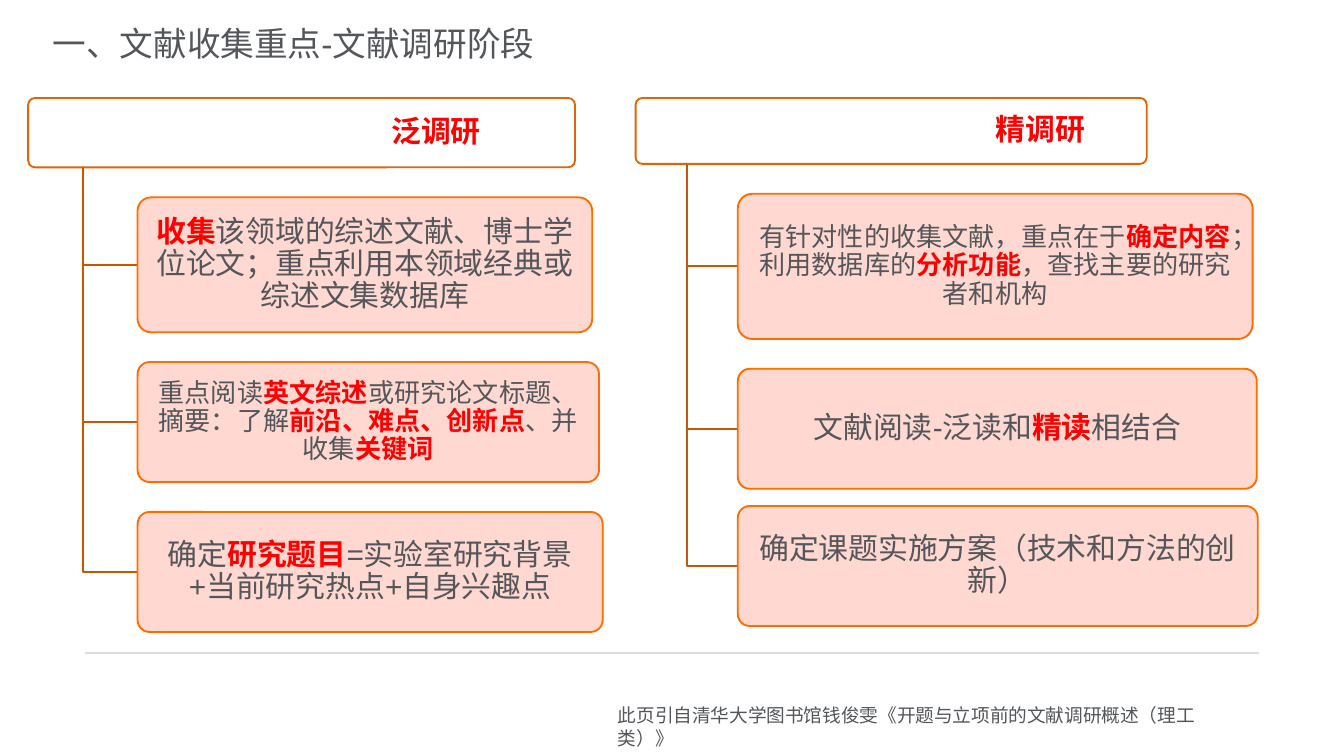
from lxml import etree
from pptx import Presentation
from pptx import util as u
from pptx.dml.color import RGBColor
from pptx.enum import shapes, text
from pptx.oxml import ns

Pt = u.Pt
FONT = "Arial"
COLORS = {
    "text": "53565A",
    "accent": "FF0000",
    "white": "FFFFFF",
    "header_line": "E76200",
    "card": "FFD4CC",
    "card_line": "FF6C00",
    "branch": "CC5600",
    "rule": "DCDCDC",
}
HEADER_TOP = 52.5

COLUMNS = [
    {
        "header": "泛调研", "left": 15.1, "width": 293, "height": 37.2, "indent": 144,
        "cards": [
            (16, 243.6, 72.3, 16, [("收集", True), ("该领域的综述文献、博士学位论文；重点利用本领域经典或综述文集数据库", False)]),
            (16, 247.2, 64.3, 14, [("重点阅读", False), ("英文综述", True), ("或研究论文标题、摘要：了解", False),
                                   ("前沿、难点、创新点", True), ("、并收集", False), ("关键词", True)]),
            (16, 249.2, 64.3, 16, [("确定", False), ("研究题目", True), ("=实验室研究背景+当前研究热点+自身兴趣点", False)]),
        ],
    },
    {
        "header": "精调研", "left": 340.5, "width": 273.8, "height": 35.3, "indent": 160,
        "cards": [
            (16, 275.8, 77.8, 14, [("有针对性的收集文献，重点在于", False), ("确定内容", True), ("；利用数据库的", False),
                                   ("分析功能", True), ("，查找主要的研究者和机构", False)]),
            (16, 278, 64.3, 16, [("文献阅读-泛读和", False), ("精读", True), ("相结合", False)]),
            (9.2, 278.6, 64.3, 16, [("确定课题实施方案（技术和方法的创新）", False)]),
        ],
    },
]


def rgb(name):
    return RGBColor.from_string(COLORS[name])


def set_font(font, size, color="text"):
    font.name = FONT
    font.size = Pt(size)
    font.color.rgb = rgb(color)


def add_title(page, words):
    title = page.shapes.title
    title.left, title.top, title.width, title.height = Pt(21), Pt(10.8), Pt(486.7), Pt(24.5)
    frame = title.text_frame
    frame.auto_size = text.MSO_AUTO_SIZE.NONE
    frame.vertical_anchor = text.MSO_ANCHOR.MIDDLE
    frame.margin_left = frame.margin_right = Pt(7.2)
    frame.margin_top = frame.margin_bottom = 0
    para = frame.paragraphs[0]
    para.text = words
    para.alignment = text.PP_ALIGN.LEFT
    set_font(para.font, 18)


def add_rule(page):
    rule = page.shapes.add_connector(shapes.MSO_CONNECTOR.STRAIGHT, Pt(45.5), Pt(350), Pt(674.5), Pt(350))
    rule.line.color.rgb = rgb("rule")
    rule.line.width = Pt(1)
    etree.SubElement(rule._element.spPr, ns.qn("a:effectLst"))


def add_box(page, left, top, width, height, fill, line, size, spans, indent=0):
    box = page.shapes.add_shape(
        shapes.MSO_SHAPE.ROUNDED_RECTANGLE, Pt(left), Pt(top), Pt(width), Pt(height))
    box.adjustments[0] = 0.1
    box.shadow.inherit = False
    box.fill.solid()
    box.fill.fore_color.rgb = rgb(fill)
    box.line.color.rgb = rgb(line)
    box.line.width = Pt(1)
    frame = box.text_frame
    frame.word_wrap = True
    frame.vertical_anchor = text.MSO_ANCHOR.MIDDLE
    frame.margin_left = Pt(4 + indent)
    frame.margin_right = frame.margin_top = frame.margin_bottom = Pt(4)
    para = frame.paragraphs[0]
    para.alignment = text.PP_ALIGN.CENTER
    para.line_spacing = 0.9
    set_font(para.font, size)
    for words, marked in spans:
        span = para.add_run()
        span.text = words
        span.font.bold = marked
        span.font.color.rgb = rgb("accent" if marked else "text")
    return box


def set_opacity(box, percent):
    color = box.fill._xPr.find(ns.qn("a:solidFill"))[0]
    etree.SubElement(color, ns.qn("a:alpha"), val=str(percent * 1000))


def add_branch(page, trunk, top, middle, card_left):
    builder = page.shapes.build_freeform(Pt(trunk), Pt(top))
    builder.add_line_segments([(Pt(trunk), Pt(middle)), (Pt(card_left), Pt(middle))], close=False)
    branch = builder.convert_to_shape()
    branch.shadow.inherit = False
    branch.fill.background()
    branch.line.color.rgb = rgb("branch")
    branch.line.width = Pt(1)


def add_column(page, column):
    left, width, height = column["left"], column["width"], column["height"]
    add_box(page, left, HEADER_TOP, width, height, "white", "header_line", 16,
            [(column["header"], True)], column["indent"])
    trunk = left + width * 0.1
    card_left = left + width * 0.2
    header_bottom = bottom = HEADER_TOP + height
    for gap, card_width, card_height, size, spans in column["cards"]:
        top = bottom + gap
        add_branch(page, trunk, header_bottom, top + card_height / 2, card_left)
        card = add_box(page, card_left, top, card_width, card_height, "card", "card_line", size, spans)
        set_opacity(card, 90)
        bottom = top + card_height


def add_source(page, words):
    box = page.shapes.add_textbox(Pt(324), Pt(373.7), Pt(348.5), Pt(19.4))
    frame = box.text_frame
    frame.word_wrap = True
    frame.auto_size = text.MSO_AUTO_SIZE.SHAPE_TO_FIT_TEXT
    para = frame.paragraphs[0]
    para.text = words
    set_font(para.font, 10)


def main():
    deck = Presentation()
    deck.slide_width, deck.slide_height = Pt(720), Pt(405)
    page = deck.slides.add_slide(deck.slide_layouts[5])
    add_rule(page)
    add_title(page, "一、文献收集重点-文献调研阶段")
    for column in COLUMNS:
        add_column(page, column)
    add_source(page, "此页引自清华大学图书馆钱俊雯《开题与立项前的文献调研概述（理工类）》")
    deck.save("out.pptx")


if __name__ == "__main__":
    main()
